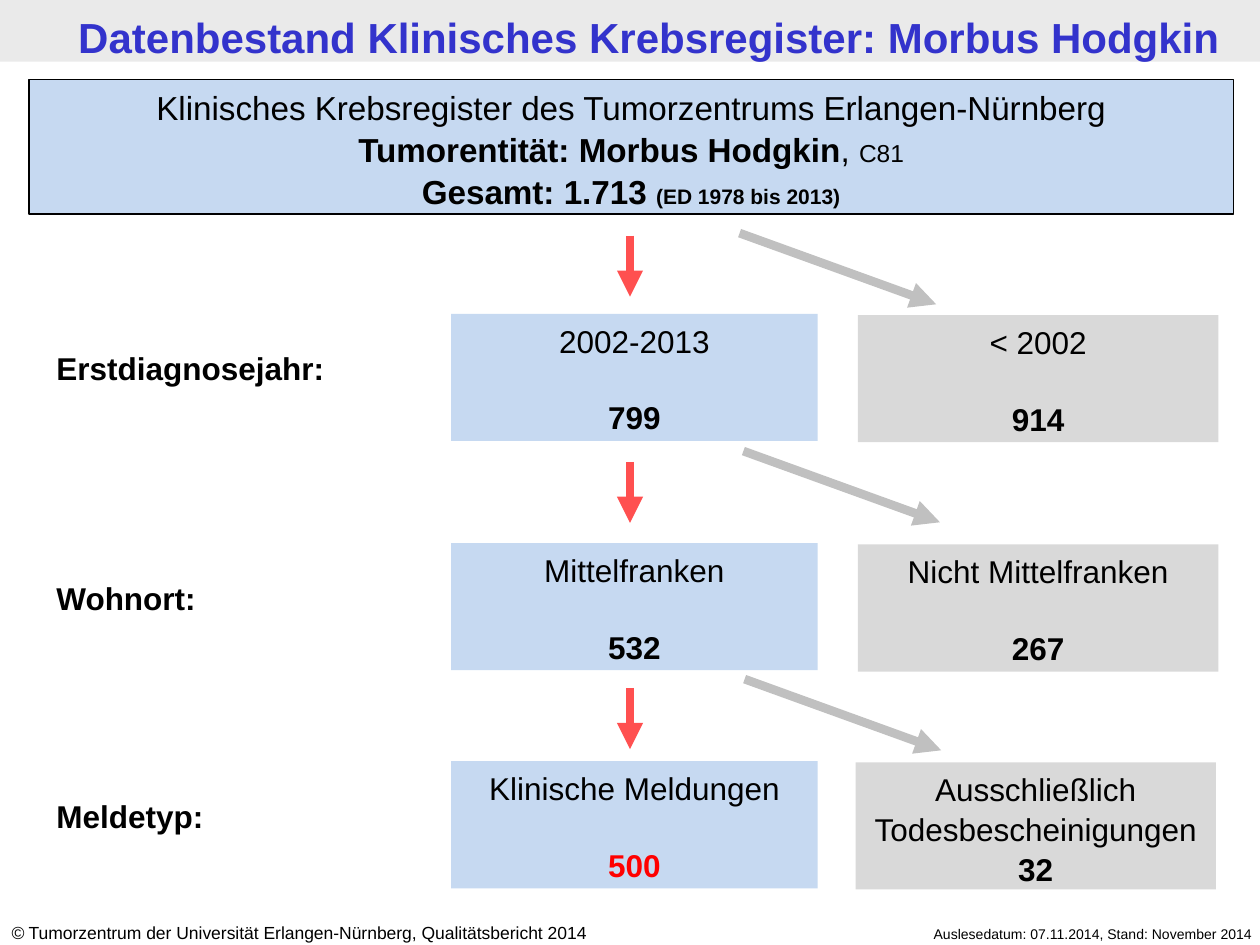
from lxml import etree
from pptx import Presentation
from pptx import util as u
from pptx.dml.color import RGBColor
from pptx.enum import shapes, text
from pptx.oxml import ns

HUES = {
    "blue": "C6D9F1", "grey": "D9D9D9", "band": "EAEAEA", "title": "3333CC",
    "black": "000000", "hit": "FF0000", "red": "FF5050", "steel": "C0C0C0",
}
PAD = (0.1, 0.05, 0.1, 0.05)
SIDES = ("margin_left", "margin_top", "margin_right", "margin_bottom")
ALIGN = {"l": text.PP_ALIGN.LEFT, "c": text.PP_ALIGN.CENTER, "r": text.PP_ALIGN.RIGHT}


def hue(name):
    return RGBColor.from_string(HUES[name])


def write(shape, paras, size=18, align="c", gap=0, pad=PAD):
    """Fill a shape with paragraphs, each a list of (words, format) runs."""
    frame = shape.text_frame
    frame.word_wrap = True
    frame.vertical_anchor = text.MSO_ANCHOR.TOP
    for side, inset in zip(SIDES, pad):
        setattr(frame, side, u.Inches(inset))
    for i, runs in enumerate(paras):
        para = frame.paragraphs[0] if i == 0 else frame.add_paragraph()
        para.alignment = ALIGN[align]
        para.line_spacing = 1.05
        if i and gap:
            para.space_before = u.Pt(gap)
        for words, form in runs:
            run = para.add_run()
            run.text = words
            look = {"name": "Arial", "size": size, "color": "black", **form}
            run.font.color.rgb = hue(look.pop("color"))
            look["size"] = u.Pt(look["size"])
            for key, value in look.items():
                setattr(run.font, key, value)


def panel(slide, box, fill, edge=None):
    shape = slide.shapes.add_shape(shapes.MSO_SHAPE.RECTANGLE, *map(u.Inches, box))
    shape.shadow.inherit = False
    shape.fill.solid()
    shape.fill.fore_color.rgb = hue(fill)
    if edge:
        shape.line.color.rgb = hue(edge)
        shape.line.width = u.Pt(0.75)
    else:
        shape.line.fill.background()
    return shape


def label(slide, box, runs, **form):
    write(slide.shapes.add_textbox(*map(u.Inches, box)), [runs], **form)


def arrow(slide, x, y, dx, dy, color):
    line = slide.shapes.add_connector(
        shapes.MSO_CONNECTOR.STRAIGHT, *map(u.Inches, (x, y, x + dx, y + dy)))
    line.line.color.rgb = hue(color)
    line.line.width = u.Pt(5)
    etree.SubElement(line.line._get_or_add_ln(), ns.qn("a:tailEnd"), type="triangle")
    etree.SubElement(line._element.spPr, ns.qn("a:effectLst"))


def title(slide, box):
    left, top, width, height = box
    panel(slide, box, "band")
    label(slide, (left + 0.3, top + 0.03, width - 0.3, height),
          [("Datenbestand Klinisches Krebsregister: Morbus Hodgkin",
            {"bold": True, "color": "title"})],
          size=24, pad=(0.09, 0.04, 0.09, 0.04))


def total(slide, box):
    bold = {"bold": True}
    write(panel(slide, box, "blue", "black"), [
        [("Klinisches Krebsregister des Tumorzentrums Erlangen-Nürnberg", {})],
        [("Tumorentität: Morbus Hodgkin", bold), (", ", {}), ("C81", {"size": 14})],
        [("Gesamt: 1.713 ", bold), ("(ED 1978 bis 2013)", {"bold": True, "size": 12})],
    ], size=19)


def step(slide, box, name, kept, out, color="black", shift=0, gap=21):
    """One selection row: name, kept cases in blue, excluded cases in grey."""
    left, top, width, height = box
    label(slide, (left, top + 0.22, 2.76, 0.4), [(name, {"bold": True})], align="l")
    cells = (
        (3.23, 0, 2.91, "blue", kept, color, 21),
        (6.46 + shift, 0.01, 2.86, "grey", out, "black", gap),
    )
    for x, y, wide, fill, (group, count), ink, space in cells:
        shape = panel(slide, (left + x, top + y, wide, height), fill)
        write(shape, [[(group, {})], [(count, {"bold": True, "color": ink})]], gap=space)


def footer(slide, box):
    left, top, width, height = box
    label(slide, (left, top, 5.23, height),
          [("©", {"italic": True}),
           (" Tumorzentrum der Universität Erlangen-Nürnberg, Qualitätsbericht 2014", {})],
          size=10, align="l", pad=(0.09, 0.05, 0.1, 0))
    label(slide, (left + width - 3.39, top + 0.03, 3.39, height - 0.03),
          [("Auslesedatum: 07.11.2014, Stand: November 2014", {})],
          size=8, align="r", pad=(0.1, 0.05, 0.06, 0))


def main():
    deck = Presentation()
    deck.slide_width, deck.slide_height = u.Inches(10), u.Inches(7.5)
    slide = deck.slides.add_slide(deck.slide_layouts[6])
    title(slide, (0, 0, 10, 0.49))
    total(slide, (0.23, 0.63, 9.56, 1.07))
    rows = (
        (2.49, "Erstdiagnosejahr:", ("2002-2013", "799"), ("< 2002", "914"), {}),
        (4.31, "Wohnort:", ("Mittelfranken", "532"), ("Nicht Mittelfranken", "267"), {}),
        (6.04, "Meldetyp:", ("Klinische Meldungen", "500"),
         ("Ausschließlich Todesbescheinigungen", "32"),
         {"color": "hit", "shift": -0.02, "gap": 0}),
    )
    for top, name, kept, out, form in rows:
        step(slide, (0.35, top, 9.32, 1.01), name, kept, out, **form)
    for i, (x, y) in enumerate(((5.87, 1.85), (5.9, 3.58), (5.91, 5.39))):
        arrow(slide, 5, 1.87 + 1.795 * i, 0, 0.485, "red")
        arrow(slide, x, y, 1.56, 0.565, "steel")
    footer(slide, (0, 7.26, 10, 0.24))
    deck.save("out.pptx")


if __name__ == "__main__":
    main()
